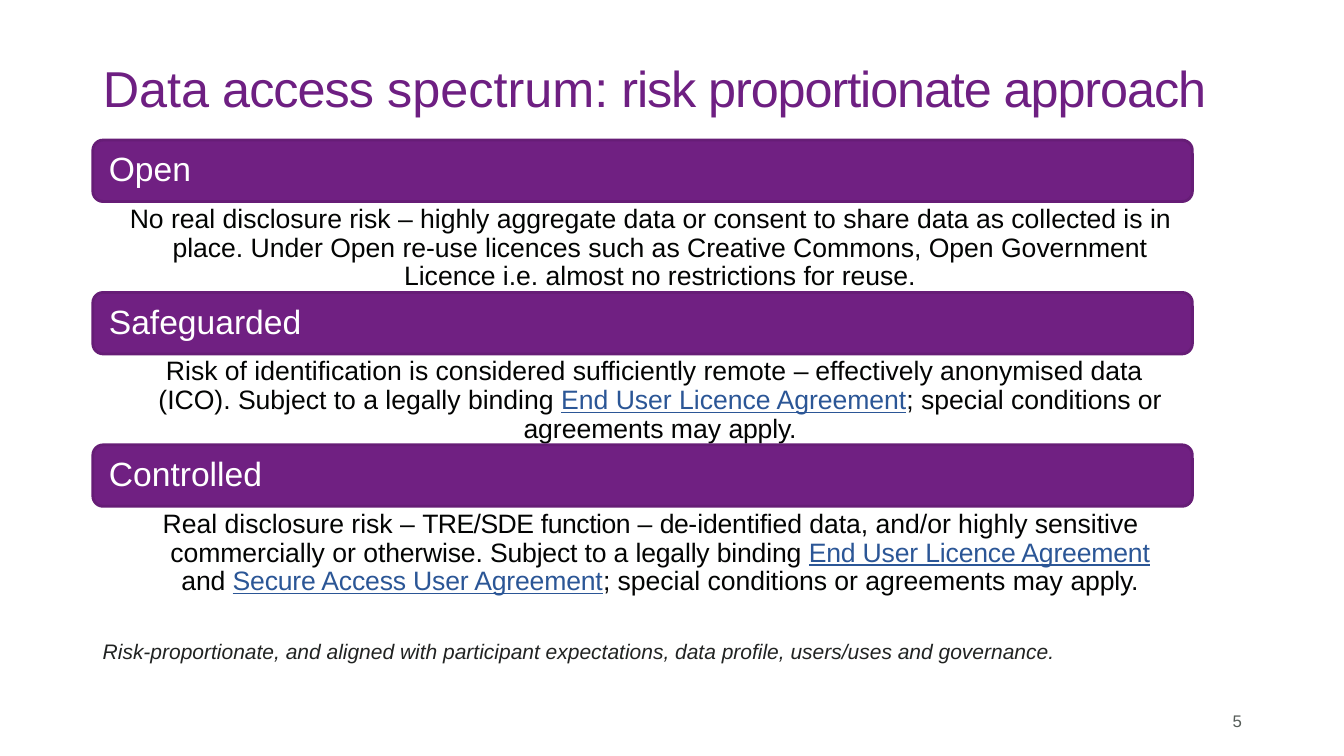
from dataclasses import dataclass

from lxml import etree
from pptx import Presentation
from pptx.dml.color import RGBColor
from pptx.enum.shapes import MSO_SHAPE
from pptx.enum.text import MSO_ANCHOR, MSO_AUTO_SIZE, PP_ALIGN
from pptx.oxml.ns import qn
from pptx.util import Cm, Pt

ROUNDED = MSO_SHAPE.ROUNDED_RECTANGLE
TOP, MIDDLE = MSO_ANCHOR.TOP, MSO_ANCHOR.MIDDLE
LEFT, CENTER, RIGHT = PP_ALIGN.LEFT, PP_ALIGN.CENTER, PP_ALIGN.RIGHT
NO_FIT = MSO_AUTO_SIZE.NONE

TITLE_PURPLE = RGBColor(0x6E, 0x1F, 0x82)
BAR_PURPLE = RGBColor(0x70, 0x20, 0x82)
BAR_EDGE = RGBColor(0x66, 0x1D, 0x76)
WHITE = RGBColor(0xFF, 0xFF, 0xFF)
BODY_BLACK = RGBColor(0x03, 0x04, 0x03)
LINK_BLUE = RGBColor(0x2B, 0x56, 0x96)
NOTE_BLACK = RGBColor(0x21, 0x23, 0x22)
NUMBER_GREY = RGBColor(0x55, 0x5C, 0x58)

FONT = "Arial"
MARGIN = 2.34  # cm, as are all lengths below
WIDTH = 27.71
BAR_TOP, BAR_HEIGHT, PITCH = 3.53, 1.55, 3.84
BODY_OFFSET, BODY_HEIGHT = 1.57, 2.29
HANGING = 0.48
DEFAULT_INSETS = (0.25, 0.13, 0.25, 0.13)


@dataclass(frozen=True)
class Span:
    text: str
    spacing: float = 0  # points between letters
    link: bool = False


@dataclass(frozen=True)
class AccessLevel:
    name: str
    spans: tuple[Span, ...]


TITLE = (
    Span("Data"),
    Span(" access ", -0.7),
    Span("spectrum"),
    Span(": ", -0.7),
    Span("risk proportionate approach", -0.8),
)

LEVELS = (
    AccessLevel("Open", (
        Span("No real disclosure risk – highly aggregate data or consent to share "
             "data as collected is in place. Under Open re-use licences such as "
             "Creative Commons, Open Government Licence i.e. almost no "
             "restrictions for reuse."),
    )),
    AccessLevel("Safeguarded", (
        Span(" Risk of identification is considered sufficiently remote "),
        Span("– ", -0.5),
        Span("effectively anonymised data (ICO). Subject to a legally binding "),
        Span("End User Licence Agreement", link=True),
        Span("; special conditions or agreements may "),
        Span("apply.", -0.1),
    )),
    AccessLevel("Controlled", (
        Span("Real disclosure risk – "),
        Span("TRE/SDE ", -0.4),
        Span("function ", -0.3),
        Span("– "),
        Span("de-", -0.3),
        Span("identified ", -0.1),
        Span("data, and/or highly sensitive commercially or "),
        Span("otherwise. Subject to a legally binding ", -0.1),
        Span("End User Licence Agreement ", -0.1, link=True),
        Span("and ", -0.1),
        Span("Secure Access User Agreement", -0.1, link=True),
        Span("; ", -0.1),
        Span("special conditions or agreements may "),
        Span("apply.", -0.1),
    )),
)

NOTE = ("Risk-proportionate, and aligned with participant expectations, "
        "data profile, users/uses and governance.")


def write(sp, spans: tuple[Span, ...], size: float, color: RGBColor,
          align=LEFT, anchor=MIDDLE, insets=DEFAULT_INSETS,
          line_spacing: float = 1.0, italic: bool = False):
    """Fill a shape with one paragraph of formatted runs."""
    tf = sp.text_frame
    tf.word_wrap = True
    tf.auto_size = NO_FIT
    tf.vertical_anchor = anchor
    (tf.margin_left, tf.margin_top,
     tf.margin_right, tf.margin_bottom) = map(Cm, insets)
    p = tf.paragraphs[0]
    p.alignment = align
    p.line_spacing = line_spacing
    for span in spans:
        r = p.add_run()
        r.text = span.text
        r.font.name = FONT
        r.font.size = Pt(size)
        r.font.italic = italic
        r.font.color.rgb = LINK_BLUE if span.link else color
        if span.link:
            r.font.underline = True
        if span.spacing:
            r._r.get_or_add_rPr().set("spc", str(round(span.spacing * 100)))
    return p


def add_text(slide, left: float, top: float, width: float, height: float):
    return slide.shapes.add_textbox(Cm(left), Cm(top), Cm(width), Cm(height))


def add_level(slide, level: AccessLevel, top: float) -> None:
    """Draw a heading bar with its description below."""
    bar = slide.shapes.add_shape(ROUNDED, Cm(MARGIN), Cm(top),
                                 Cm(WIDTH), Cm(BAR_HEIGHT))
    bar.shadow.inherit = False
    bar.fill.solid()
    bar.fill.fore_color.rgb = BAR_PURPLE
    bar.line.color.rgb = BAR_EDGE
    bar.line.width = Pt(2)
    write(bar, (Span(level.name),), 24, WHITE,
          insets=(0.33, 0.25, 0.33, 0.25), line_spacing=0.9)

    body = add_text(slide, MARGIN, top + BODY_OFFSET, WIDTH, BODY_HEIGHT)
    p = write(body, level.spans, 19, BODY_BLACK, CENTER, TOP,
              insets=(0.88, 0.08, 0.48, 0.08), line_spacing=0.9)
    # Hanging indent without a bullet
    pPr = p._p.get_or_add_pPr()
    pPr.set("marL", str(Cm(HANGING)))
    pPr.set("indent", str(-Cm(HANGING)))
    etree.SubElement(pPr, qn("a:buNone"))


def main() -> None:
    prs = Presentation()
    prs.slide_width, prs.slide_height = Cm(33.87), Cm(19.05)
    slide = prs.slides.add_slide(prs.slide_layouts[5])

    # Title
    title = slide.shapes.title
    title.left, title.top = Cm(MARGIN), Cm(1.45)
    title.width, title.height = Cm(28.68), Cm(1.52)
    write(title, TITLE, 36, TITLE_PURPLE)

    # Access levels
    for i, level in enumerate(LEVELS):
        add_level(slide, level, BAR_TOP + i * PITCH)

    # Closing note
    note = add_text(slide, MARGIN, 16.13, WIDTH, 1.52)
    write(note, (Span(NOTE),), 15, NOTE_BLACK, anchor=TOP,
          line_spacing=0.7, italic=True)

    # Slide number
    number = add_text(slide, 23.93, 17.65, 7.62, 1.02)
    write(number, (Span("5"),), 12, NUMBER_GREY, RIGHT)

    prs.save("out.pptx")


if __name__ == "__main__":
    main()
